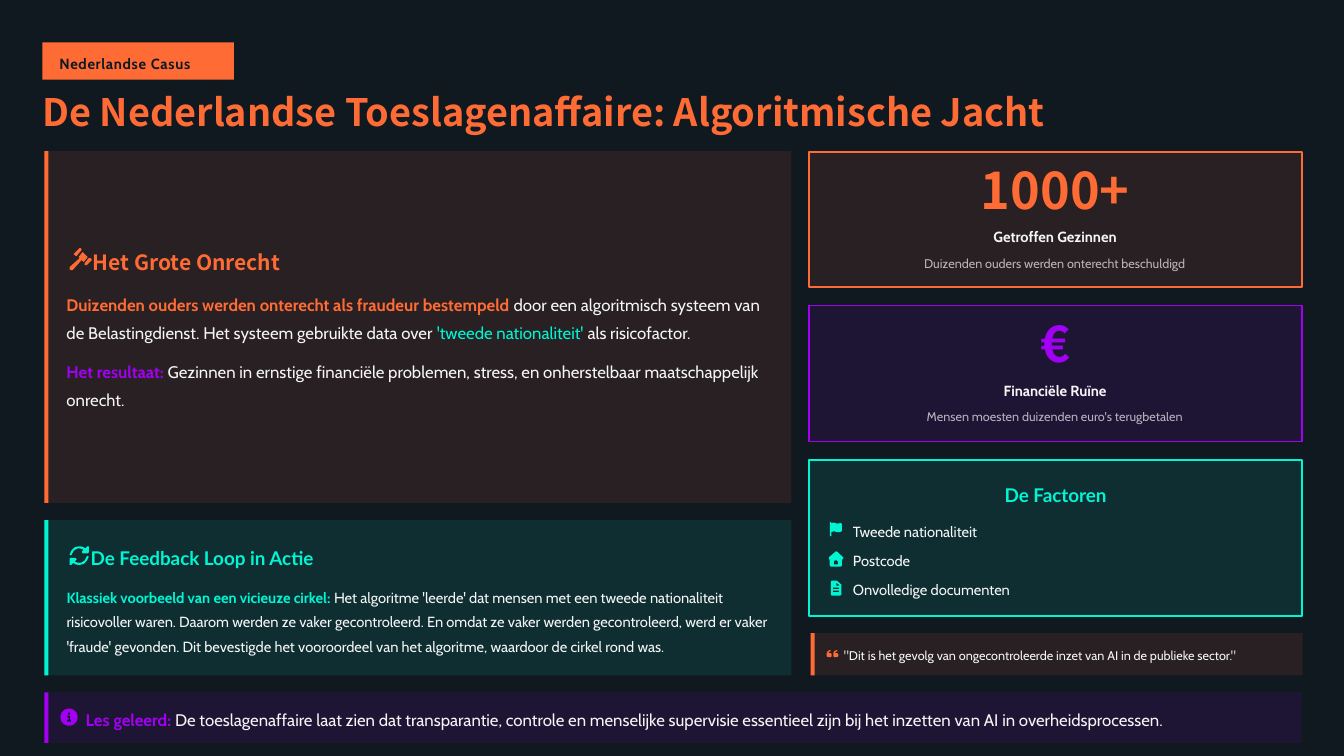
from math import cos, sin, pi
from pptx import Presentation
from pptx.dml.color import RGBColor
from pptx.enum.shapes import MSO_SHAPE
from pptx.enum.text import MSO_ANCHOR, MSO_AUTO_SIZE, PP_ALIGN
from pptx.oxml.ns import qn
from pptx.util import Inches, Pt
from lxml.etree import SubElement

ORANGE, TEAL, PURPLE = "FF6B35", "00F5D3", "A100F2"
DARK, WHITE = "101820", "F5F5F5"
HEAD, BODY, LATO = "Noto Sans CJK SC", "Cabin", "Lato"
LEFT, MID = PP_ALIGN.LEFT, PP_ALIGN.CENTER


def paint(fill, hue, alpha=100):
    fill.solid()
    fill.fore_color.rgb = RGBColor.from_string(hue)
    if alpha < 100:
        color = fill._xPr.find(qn("a:solidFill"))[0]
        SubElement(color, qn("a:alpha"), val=str(alpha * 1000))


def write(box, place, lines, size, face, space, align=LEFT):
    """Each line is a list of runs: text, hue, bold and optional alpha."""
    box.left, box.top, box.width, box.height = [Inches(n) for n in place]
    frame = box.text_frame
    frame.word_wrap = True
    frame.auto_size = MSO_AUTO_SIZE.NONE
    frame.vertical_anchor = MSO_ANCHOR.MIDDLE
    frame.margin_left = frame.margin_right = 0
    frame.margin_top = frame.margin_bottom = 0
    for i, runs in enumerate(lines):
        para = frame.add_paragraph() if i else frame.paragraphs[0]
        props = para._p.get_or_add_pPr()
        props.set("marL", "0")
        props.set("indent", "0")
        SubElement(props, qn("a:buNone"))
        para.alignment = align
        para.line_spacing = space
        para.space_before = Pt(5.9 if i else 0)
        for words, hue, bold, *alpha in runs:
            run = para.add_run()
            run.text = words
            run.font.size = Pt(size)
            run.font.name = face
            run.font.bold = bold
            paint(run.font.fill, hue, *alpha)


deck = Presentation()
deck.slide_width, deck.slide_height = Inches(13.33), Inches(7.5)
slide = deck.slides.add_slide(deck.slide_layouts[1])
shapes = slide.shapes
title, facts = slide.placeholders
paint(slide.background.fill, DARK)

# Panels: left, top, width, height, hue, alpha, border
panels = [(0.42, 0.42, 1.9, 0.37, ORANGE, 100, False)]
for x, y, w, h, hue in [
    (0.44, 1.5, 7.41, 3.49, ORANGE),
    (0.44, 5.16, 7.41, 1.54, TEAL),
    (8.04, 6.28, 4.88, 0.42, ORANGE),
    (0.44, 6.87, 12.47, 0.5, PURPLE),
]:
    panels += [(x, y, w, h, hue, 10, False), (x, y, 0.04, h, hue, 100, False)]
for y, h, hue in [(1.51, 1.34, ORANGE), (3.03, 1.35, PURPLE), (4.56, 1.55, TEAL)]:
    panels.append((8.02, y, 4.89, h, hue, 10, True))
for x, y, w, h, hue, alpha, border in panels:
    panel = shapes.add_shape(MSO_SHAPE.RECTANGLE, Inches(x), Inches(y), Inches(w), Inches(h))
    panel.shadow.inherit = False
    paint(panel.fill, hue, alpha)
    if border:
        paint(panel.line.fill, hue)
        panel.line.width = Pt(1.25)
    else:
        panel.line.fill.background()

# Icons: left, top, hue, outlines in hundredths of an inch
arrow = [(18, 7), (19, 6), (19, 0), (17.5, 0), (15.5, 2), (12.5, 0.3), (9, 0), (5, 1),
         (2, 4), (0, 8), (1, 9), (2, 8.5), (4, 4.5), (7, 2.5), (9, 2), (12, 2.5),
         (14, 3.5), (12, 5.5), (13, 7)]
quote = [(0, 3), (1, 1), (3, 0), (4, 0), (4, 1), (2, 2), (2, 3), (4, 3), (5, 4),
         (5, 6), (4, 7), (1, 7), (0, 6)]
disc = [(8.5 + 8.5 * cos(k * pi / 18), 8.5 + 8.5 * sin(k * pi / 18)) for k in range(36)]
icons = [
    # Gavel
    (0.68, 2.46, ORANGE, [
        [(7, 8), (5, 6), (11, 0), (12, 0), (13, 2), (8, 8)],
        [(11, 10), (10, 9), (14, 4), (19, 9), (15, 14), (13, 12), (4, 22), (2, 22), (1, 21), (1, 19)],
        [(16, 17), (16, 15), (20, 10), (22, 10), (23, 12), (18, 17)]]),
    # Loop
    (0.69, 5.42, TEAL, [arrow, [(19 - x, 18.5 - y) for x, y in arrow]]),
    # Flag
    (8.23, 5.18, TEAL, [
        [(0, 0), (1, 0), (1.5, 1), (4, 0.5), (7, 1.5), (11, 1), (12, 2), (12, 9),
         (10, 10), (7, 10), (4, 9), (1.5, 10), (1.5, 14), (0, 14)]]),
    # House
    (8.22, 5.47, TEAL, [
        [(7, 0), (8, 0), (14.5, 6), (14, 8), (13, 8), (13, 14), (12, 15), (2, 15), (1, 14),
         (1, 8), (0, 8), (0, 6)],
        [(5, 13), (5, 10), (6, 9), (8, 9), (9, 10), (9, 13)]]),
    # Page
    (8.24, 5.76, TEAL, [
        [(0, 1), (1, 0), (6, 0), (10.5, 4), (10.5, 14), (9, 15), (1, 15), (0, 14)],
        [(5.5, 2), (5.5, 5), (9, 5)],
        [(2, 7), (8, 7), (8, 8.5), (2, 8.5)],
        [(2, 10), (8, 10), (8, 11.5), (2, 11.5)]]),
    # Quote marks
    (8.2, 6.45, ORANGE, [quote, [(x + 6.5, y) for x, y in quote]]),
    # Info
    (0.6, 7.03, PURPLE, [
        disc,
        [(7.5, 4), (9.5, 4), (9.5, 6), (7.5, 6)],
        [(6.5, 7), (9.5, 7), (9.5, 11), (10.5, 11), (10.5, 13), (6.5, 13), (6.5, 11),
         (8, 11), (8, 9), (6.5, 9)]]),
]
for x, y, hue, outlines in icons:
    pen = None
    for outline in outlines:
        first, *rest = [(px * 10, py * 10) for px, py in outline]
        if pen is None:
            pen = shapes.build_freeform(*first, scale=Inches(1) / 1000)
        else:
            pen.move_to(*first)
        pen.add_line_segments(rest, close=True)
    icon = pen.convert_to_shape(Inches(x), Inches(y))
    icon.shadow.inherit = False
    paint(icon.fill, hue)
    icon.line.fill.background()

# Title, and the list of factors in front of its panel
write(title, (0.42, 0.92, 12.69, 0.42),
      [[("De Nederlandse Toeslagenaffaire: Algoritmische Jacht", ORANGE, True)]], 27, HEAD, 0.9)
facts.element.getparent().append(facts.element)
names = ["Tweede nationaliteit", "Postcode", "Onvolledige documenten"]
write(facts, (8.46, 5.15, 4.3, 0.79), [[(name, WHITE, False)] for name in names], 10.5, BODY, 1.2)

# Text boxes: place, runs, size, font, line spacing, alignment
texts = [
    ((0.66, 2.85, 7.06, 0.54), [
        ("Duizenden ouders werden onterecht als fraudeur bestempeld", ORANGE, True),
        (" door een algoritmisch systeem van de Belastingdienst. Het systeem gebruikte data over ", WHITE, False),
        ("'tweede nationaliteit'", TEAL, False),
        (" als risicofactor.", WHITE, False)], 12, BODY, 1.4, LEFT),
    ((0.66, 3.52, 7.06, 0.54), [
        ("Het resultaat:", PURPLE, True),
        (" Gezinnen in ernstige financiële problemen, stress, en onherstelbaar maatschappelijk onrecht.",
         WHITE, False)], 12, BODY, 1.4, LEFT),
    ((0.66, 5.78, 7.05, 0.71), [
        ("Klassiek voorbeeld van een vicieuze cirkel:", TEAL, True),
        (" Het algoritme 'leerde' dat mensen met een tweede nationaliteit risicovoller waren. "
         "Daarom werden ze vaker gecontroleerd. En omdat ze vaker werden gecontroleerd, werd er "
         "vaker 'fraude' gevonden. Dit bevestigde het vooroordeel van het algoritme, waardoor de "
         "cirkel rond was.", WHITE, False)], 10.5, BODY, 1.4, LEFT),
    ((0.92, 2.43, 6.82, 0.29), [("Het Grote Onrecht", ORANGE, True)], 15, HEAD, 1.2, LEFT),
    ((0.9, 5.36, 6.83, 0.29), [("De Feedback Loop in Actie", TEAL, True)], 13.5, LATO, 1.3, LEFT),
    ((8.15, 4.73, 4.64, 0.29), [("De Factoren", TEAL, True)], 13.5, LATO, 1.3, MID),
    ((8.37, 6.41, 4.49, 0.17), [
        ('"Dit is het gevolg van ongecontroleerde inzet van AI in de publieke sector."', WHITE, False)],
     9, BODY, 1.1, LEFT),
    ((0.85, 6.99, 12.02, 0.25), [
        ("Les geleerd:", PURPLE, True),
        (" De toeslagenaffaire laat zien dat transparantie, controle en menselijke supervisie "
         "essentieel zijn bij het inzetten van AI in overheidsprocessen.", WHITE, False)],
     12, BODY, 1.3, LEFT),
]
for y, hue, mark, label, note in [
    (1.68, ORANGE, "1000+", "Getroffen Gezinnen", "Duizenden ouders werden onterecht beschuldigd"),
    (3.2, PURPLE, "€", "Financiële Ruïne", "Mensen moesten duizenden euro's terugbetalen"),
]:
    texts += [
        ((8.07, y, 4.79, 0.5), [(mark, hue, True)], 36, HEAD, 0.8, MID),
        ((8.16, y + 0.55, 4.61, 0.21), [(label, WHITE, True)], 10.5, BODY, 1.2, MID),
        ((8.16, y + 0.84, 4.6, 0.17), [(note, WHITE, False, 70)], 9, BODY, 1.1, MID),
    ]
for place, runs, *style in texts:
    write(shapes.add_textbox(0, 0, 0, 0), place, [runs], *style)

# Tag with wider letter spacing
tag = shapes.add_textbox(0, 0, 0, 0)
write(tag, (0.59, 0.42, 1.64, 0.38), [[("Nederlandse Casus", DARK, True)]], 10.5, BODY, 1.2)
tag.text_frame.paragraphs[0].runs[0]._r.get_or_add_rPr().set("spc", "50")

deck.save("out.pptx")
